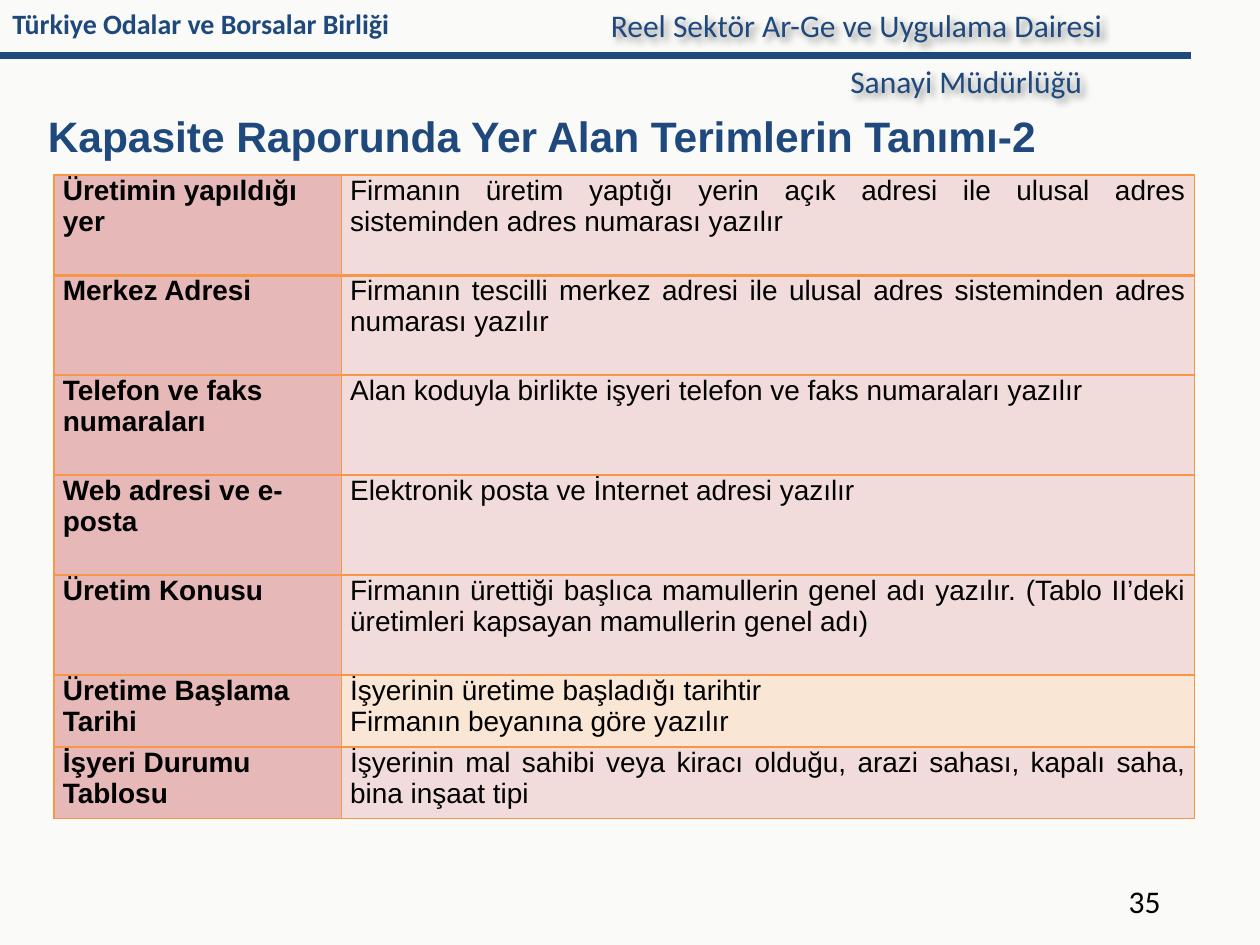
from lxml import etree
from pptx import Presentation
from pptx import util as u
from pptx.dml.color import RGBColor
from pptx.enum import shapes, text
from pptx.oxml import parse_xml
from pptx.oxml.ns import nsdecls, qn

NAVY, ORANGE, BLACK = "1F497D", "F79646", "000000"
ROSE, PINK, CREAM = "E6B9B8", "F2DCDB", "F9E6D5"

# Term, definition paragraphs, definition fill, row height in grid rows
TERMS = [
    ("Üretimin yapıldığı yer",
     ["Firmanın üretim yaptığı yerin açık adresi ile ulusal adres "
      "sisteminden adres numarası yazılır"], PINK, 7.94),
    ("Merkez Adresi",
     ["Firmanın tescilli merkez adresi ile ulusal adres sisteminden adres "
      "numarası yazılır"], PINK, 7.94),
    ("Telefon ve faks numaraları",
     ["Alan koduyla birlikte işyeri telefon ve faks numaraları yazılır"],
     PINK, 7.94),
    ("Web adresi ve e-posta",
     ["Elektronik posta ve İnternet adresi yazılır"], PINK, 7.94),
    ("Üretim Konusu",
     ["Firmanın ürettiği başlıca mamullerin genel adı yazılır. (Tablo II’deki "
      "üretimleri kapsayan mamullerin genel adı)"], PINK, 7.94),
    ("Üretime Başlama Tarihi",
     ["İşyerinin üretime başladığı tarihtir",
      "Firmanın beyanına göre yazılır"], CREAM, 5.7),
    ("İşyeri Durumu Tablosu",
     ["İşyerinin mal sahibi veya kiracı olduğu, arazi sahası, kapalı saha, "
      "bina inşaat tipi"], PINK, 5.7),
]


def color(value):
    return RGBColor.from_string(value)


class Deck:
    """Style and current slide; lengths are cells of a 100 x 75 grid."""

    def __init__(self):
        self.prs = Presentation()
        self.prs.slide_width, self.prs.slide_height = u.Inches(10), u.Inches(7.5)
        self.cell = self.prs.slide_width / 100
        self.s = self.prs.slides.add_slide(self.prs.slide_layouts[5])
        self.s.background.fill.solid()
        self.s.background.fill.fore_color.rgb = color("FAFAF9")

    def grid(self, *lengths):
        return [round(n * self.cell) for n in lengths]

    def run(self, p, words, size, font="Calibri", ink=NAVY, bold=False):
        r = p.add_run()
        r.text = words
        r.font.name, r.font.size, r.font.bold = font, u.Pt(size), bold
        r.font.color.rgb = color(ink)

    def title(self, words, *place):
        sp = self.s.shapes.title
        sp.left, sp.top, sp.width, sp.height = self.grid(*place)
        tf = sp.text_frame
        tf.word_wrap, tf.auto_size = True, text.MSO_AUTO_SIZE.NONE
        tf.vertical_anchor = text.MSO_ANCHOR.MIDDLE
        p = tf.paragraphs[0]
        p.alignment, p.line_spacing = text.PP_ALIGN.LEFT, 1.15
        self.run(p, words, 24.3, "Arial", bold=True)

    def label(self, words, *place, size=18, ink=NAVY, bold=False, shadow=False):
        sp = self.s.shapes.add_textbox(*self.grid(*place))
        sp.text_frame.word_wrap = True
        self.run(sp.text_frame.paragraphs[0], words, size, ink=ink, bold=bold)
        if shadow:
            sp._element.spPr.append(parse_xml(
                f'<a:effectLst {nsdecls("a")}><a:outerShdw blurRad="50800" '
                'dist="38100" dir="2700000" algn="tl" rotWithShape="0">'
                '<a:srgbClr val="000000"><a:alpha val="40000"/></a:srgbClr>'
                '</a:outerShdw></a:effectLst>'))

    def rule(self, x1, y1, x2, y2):
        line = self.s.shapes.add_connector(
            shapes.MSO_CONNECTOR.STRAIGHT, *self.grid(x1, y1, x2, y2))
        line.line.color.rgb, line.line.width = color(NAVY), u.Pt(4)
        etree.SubElement(line._element.spPr, qn("a:effectLst"))

    def borders(self, cell, **widths):
        tcPr = cell._tc.get_or_add_tcPr()
        for i, side in enumerate("LRTB"):
            tcPr.insert(i, parse_xml(
                f'<a:ln{side} {nsdecls("a")} w="{u.Pt(widths.get(side, 1))}">'
                f'<a:solidFill><a:srgbClr val="{ORANGE}"/></a:solidFill>'
                f'</a:ln{side}>'))

    def fill_cell(self, cell, lines, fill, bold=False, **widths):
        cell.margin_left = cell.margin_right = self.grid(0.7)[0]
        cell.margin_top = cell.margin_bottom = 0
        cell.fill.solid()
        cell.fill.fore_color.rgb = color(fill)
        self.borders(cell, **widths)
        tf = cell.text_frame
        for i, words in enumerate(lines):
            p = tf.add_paragraph() if i else tf.paragraphs[0]
            p.alignment = text.PP_ALIGN.LEFT if bold else text.PP_ALIGN.JUSTIFY
            self.run(p, words, 16, "Arial", BLACK, bold)

    def table(self, rows, x, y, columns):
        heights = [row[-1] for row in rows]
        table = self.s.shapes.add_table(
            len(rows), len(columns),
            *self.grid(x, y, sum(columns), sum(heights))).table
        for column, width in zip(table.columns, self.grid(*columns)):
            column.width = width
        for i, (term, lines, fill, height) in enumerate(rows):
            table.rows[i].height = self.grid(height)[0]
            # A heavier line closes the first row and opens the second
            heavy = {0: {"B": 2}, 1: {"T": 2}}.get(i, {})
            self.fill_cell(table.cell(i, 0), [term], ROSE, True, **heavy)
            self.fill_cell(table.cell(i, 1), lines, fill, **heavy)


def main():
    deck = Deck()
    # Header band
    deck.rule(0, 4.4, 94.5, 4.4)
    deck.label("Türkiye Odalar ve Borsalar Birliği", 0, 0, 81.5, 3.7,
               size=16, bold=True)
    deck.label("Reel Sektör Ar-Ge ve Uygulama Dairesi", 47.5, 0, 44.1, 4,
               shadow=True)
    deck.label("Sanayi Müdürlüğü", 66.5, 4.4, 25.1, 4, shadow=True)
    # Title and definitions
    deck.title("Kapasite Raporunda Yer Alan Terimlerin Tanımı-2",
               2.8, 8.1, 92.4, 4.7)
    deck.table(TERMS, 4.3, 13.9, [22.8, 67.7])
    # Page number
    deck.label("35", 88.6, 69.5, 6.4, 4, ink=BLACK)
    deck.prs.save("out.pptx")


if __name__ == "__main__":
    main()
